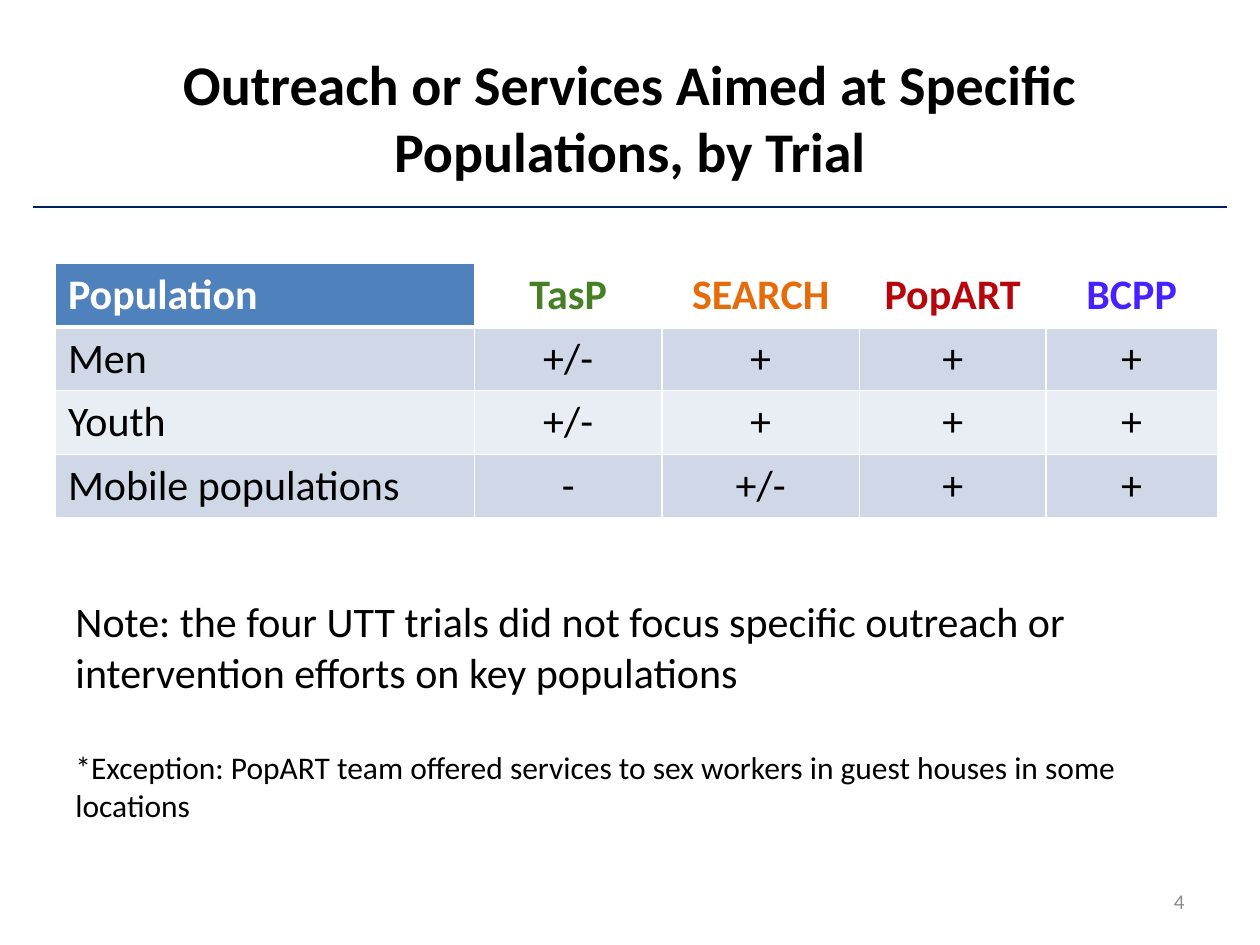
import pptx
import pptx.util
import pptx.dml.color
import pptx.enum.shapes
import pptx.enum.text
import pptx.oxml
import pptx.oxml.ns

Pt = pptx.util.Pt
ALIGN = pptx.enum.text.PP_ALIGN
ANCHOR = pptx.enum.text.MSO_ANCHOR

COLORS = {
    "text": "000000", "white": "FFFFFF", "rule": "002060", "number": "8C8C8C",
    "header": "4F81BD", "band_dark": "D0D8E8", "band_light": "E9EDF4",
    "TasP": "458024", "SEARCH": "E46C0A", "PopART": "B7050C", "BCPP": "4721FF",
}
FONT = "Calibri"
TITLE = "Outreach or Services Aimed at Specific Populations, by Trial"
TRIALS = ["TasP", "SEARCH", "PopART", "BCPP"]
POPULATIONS = [
    ("Men", "+/-", "+", "+", "+"),
    ("Youth", "+/-", "+", "+", "+"),
    ("Mobile populations", "-", "+/-", "+", "+"),
]
NOTE = ("Note: the four UTT trials did not focus specific outreach or "
        "intervention efforts on key populations")
EXCEPTION = ("*Exception: PopART team offered services to sex workers "
             "in guest houses in some locations")
PAGE_NUMBER = "4"

COLUMN_WIDTHS = [239.5, 107, 113, 106.5, 98]
ROW_HEIGHT = 36.4


def rgb(name):
    return pptx.dml.color.RGBColor.from_string(COLORS[name])


def style(paragraph, size, color="text", bold=False, align=ALIGN.LEFT):
    paragraph.alignment = align
    font = paragraph.font
    font.name, font.size, font.bold = FONT, Pt(size), bold
    font.color.rgb = rgb(color)


def add_text(slide, box, paragraphs, anchor=ANCHOR.TOP):
    """Add a text box; each paragraph is (text, space before, style options)."""
    frame = slide.shapes.add_textbox(*map(Pt, box)).text_frame
    frame.word_wrap = True
    frame.vertical_anchor = anchor
    for index, (text, space, options) in enumerate(paragraphs):
        paragraph = frame.add_paragraph() if index else frame.paragraphs[0]
        paragraph.text = text
        paragraph.space_before = Pt(space)
        style(paragraph, **options)


def set_borders(cell, bottom):
    """Draw white cell borders, 1 pt wide except at the bottom."""
    properties = cell._tc.get_or_add_tcPr()
    widths = {"lnL": 1, "lnR": 1, "lnT": 1, "lnB": bottom}
    for index, (side, width) in enumerate(widths.items()):
        properties.insert(index, pptx.oxml.parse_xml(
            f'<a:{side} {pptx.oxml.ns.nsdecls("a")} w="{Pt(width)}"><a:solidFill>'
            f'<a:srgbClr val="{COLORS["white"]}"/></a:solidFill></a:{side}>'))


def add_trial_table(slide):
    rows = [("Population", *TRIALS), *POPULATIONS]
    table = slide.shapes.add_table(
        len(rows), len(COLUMN_WIDTHS), Pt(31.7), Pt(150.5),
        Pt(sum(COLUMN_WIDTHS)), Pt(ROW_HEIGHT * len(rows))).table
    for column, width in zip(table.columns, COLUMN_WIDTHS):
        column.width = Pt(width)
    for r, row in enumerate(rows):
        table.rows[r].height = Pt(ROW_HEIGHT)
        for c, text in enumerate(row):
            cell = table.cell(r, c)
            cell.text = text
            is_header = r == 0
            if is_header and c:
                cell.fill.background()
            else:
                band = "band_dark" if r % 2 else "band_light"
                cell.fill.solid()
                cell.fill.fore_color.rgb = rgb("header" if is_header else band)
            color = "text"
            if is_header:
                color = text if c else "white"
            style(cell.text_frame.paragraphs[0], 24, color, is_header,
                  ALIGN.CENTER if c else ALIGN.LEFT)
            set_borders(cell, bottom=3 if is_header else 1)


def add_title_rule(slide):
    rule = slide.shapes.add_shape(pptx.enum.shapes.MSO_SHAPE.RECTANGLE,
                                  Pt(18), Pt(116.5), Pt(684), Pt(3.6))
    rule.shadow.inherit = False
    rule.fill.solid()
    rule.fill.fore_color.rgb = rgb("rule")
    rule.line.color.rgb = rgb("white")
    rule.line.width = Pt(2)


def main():
    deck = pptx.Presentation()
    deck.slide_width, deck.slide_height = Pt(720), Pt(540)
    slide = deck.slides.add_slide(deck.slide_layouts[6])

    add_text(slide, (36, 21.6, 648, 90),
             [(TITLE, 0, dict(size=32, bold=True, align=ALIGN.CENTER))], ANCHOR.MIDDLE)
    add_trial_table(slide)
    add_title_rule(slide)
    add_text(slide, (36, 337, 666, 138),
             [(NOTE, 0, dict(size=24)), (EXCEPTION, 29.3, dict(size=18))])
    add_text(slide, (516, 500.5, 168, 28.8),
             [(PAGE_NUMBER, 0, dict(size=12, color="number", align=ALIGN.RIGHT))],
             ANCHOR.MIDDLE)
    deck.save("out.pptx")


if __name__ == "__main__":
    main()
